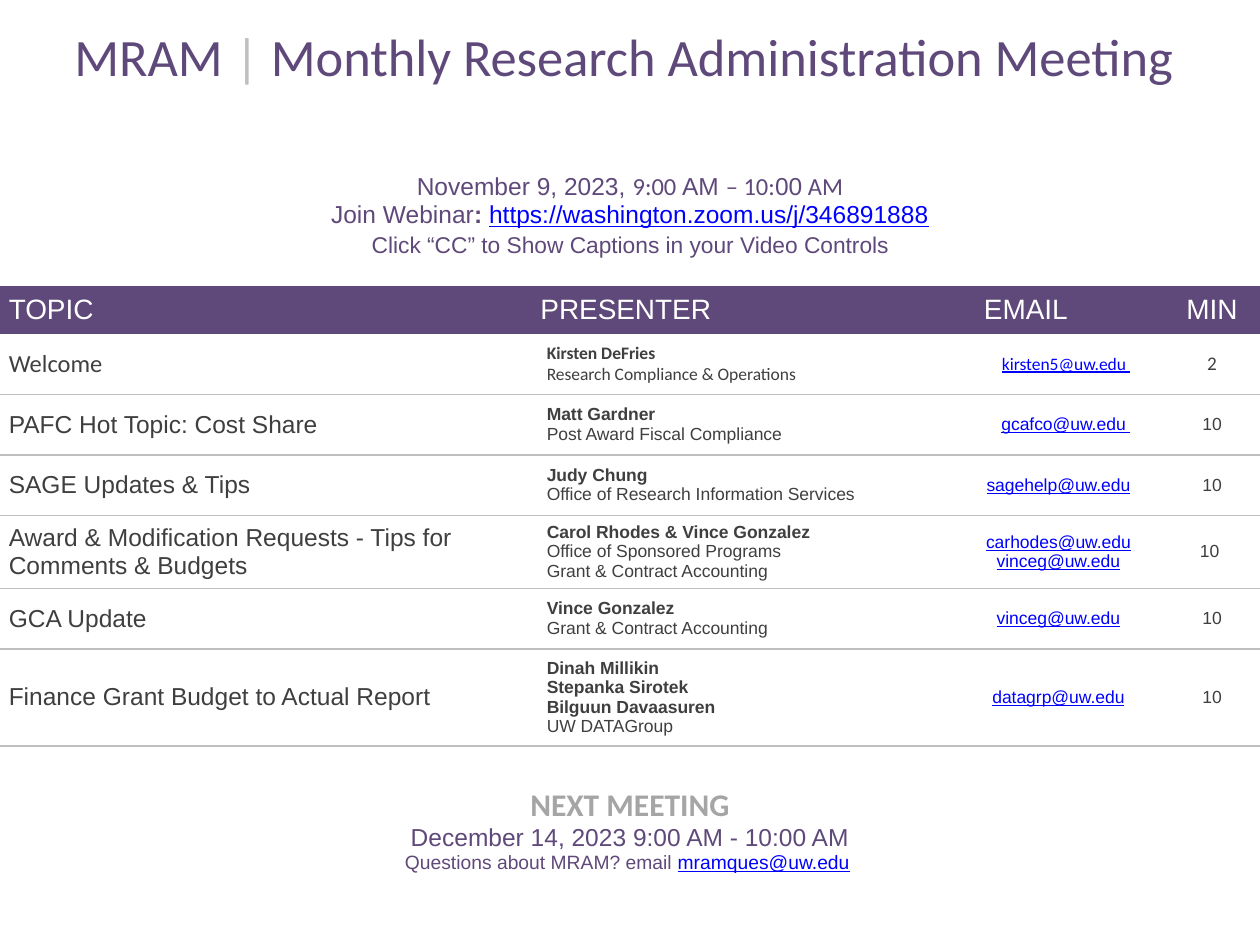
from dataclasses import dataclass

from lxml.etree import SubElement
from pptx import Presentation
from pptx.dml.color import RGBColor
from pptx.enum.text import MSO_ANCHOR, PP_ALIGN
from pptx.oxml.ns import qn
from pptx.util import Inches, Pt


@dataclass(frozen=True)
class Theme:
    purple: str = "5F497A"
    gray: str = "A5A5A5"
    rule: str = "BFBFBF"
    text: str = "3F3F3F"
    link: str = "0000FF"
    white: str = "FFFFFF"
    sans: str = "Arial"
    accent_font: str = "Calibri"
    title: int = 30
    subtitle: int = 18
    header: int = 16
    topic: int = 14
    caption: int = 13
    small: int = 11
    detail: int = 10


THEME = Theme()
COLUMN_WIDTHS = [4.22, 3.46, 1.56, 0.76]
ROW_HEIGHTS = [0.72, 1.55, 0.38, 0.48, 0.48, 0.48, 0.58, 0.48, 0.77, 1.58]
HEADER_ROW = 2
FIRST_TOPIC_ROW = 3
CENTER, LEFT = PP_ALIGN.CENTER, PP_ALIGN.LEFT

# Topic, presenters, offices, emails, minutes
AGENDA = [
    ("Welcome", ["Kirsten DeFries"], ["Research Compliance & Operations"],
     ["kirsten5@uw.edu "], "2"),
    ("PAFC Hot Topic: Cost Share", ["Matt Gardner"],
     ["Post Award Fiscal Compliance"], ["gcafco@uw.edu "], "10"),
    ("SAGE Updates & Tips", ["Judy Chung"],
     ["Office of Research Information Services"], ["sagehelp@uw.edu"], "10"),
    ("Award & Modification Requests - Tips for Comments & Budgets",
     ["Carol Rhodes & Vince Gonzalez"],
     ["Office of Sponsored Programs", "Grant & Contract Accounting"],
     ["carhodes@uw.edu", "vinceg@uw.edu"], "10 "),
    ("GCA Update", ["Vince Gonzalez"], ["Grant & Contract Accounting"],
     ["vinceg@uw.edu"], "10"),
    ("Finance Grant Budget to Actual Report",
     ["Dinah Millikin", "Stepanka Sirotek", "Bilguun Davaasuren"],
     ["UW DATAGroup"], ["datagrp@uw.edu"], "10"),
]


def run(text, size, color=THEME.purple, name=THEME.sans, bold=False,
        underline=False):
    """Describe one piece of text and its font."""
    return text, color, dict(size=Pt(size), name=name, bold=bold,
                             underline=underline)


def link(text, size, name=THEME.sans):
    return run(text, size, THEME.link, name, underline=True)


def fill_cell(cell, lines, align=LEFT, anchor=MSO_ANCHOR.MIDDLE,
              margins=(0.07, 0, 0.07, 0), fill=THEME.white):
    """Write lines (lists of runs) into a cell and colour it."""
    cell.fill.solid()
    cell.fill.fore_color.rgb = RGBColor.from_string(fill)
    cell.vertical_anchor = anchor
    for side, margin in zip(("left", "top", "right", "bottom"), margins):
        setattr(cell, f"margin_{side}", Inches(margin))
    frame = cell.text_frame
    for index, line in enumerate(lines):
        paragraph = frame.add_paragraph() if index else frame.paragraphs[0]
        paragraph.alignment = align
        for text, color, font_values in line:
            piece = paragraph.add_run()
            piece.text = text
            for attribute, value in font_values.items():
                setattr(piece.font, attribute, value)
            piece.font.color.rgb = RGBColor.from_string(color)


def set_borders(cell, ruled_sides):
    """Rule the named sides of a cell and clear the others."""
    properties = cell._tc.get_or_add_tcPr()
    for side in "LRTB":
        border = SubElement(properties, qn(f"a:ln{side}"), w=str(Pt(1)))
        if side in ruled_sides:
            solid = SubElement(border, qn("a:solidFill"))
            SubElement(solid, qn("a:srgbClr"), val=THEME.rule)
        else:
            SubElement(border, qn("a:noFill"))


def add_grid(slide, left, top, width, height):
    """Add the table with its columns, rows, rules and merged rows."""
    table = slide.shapes.add_table(len(ROW_HEIGHTS), len(COLUMN_WIDTHS),
                                   left, top, width, height).table
    table.first_row = table.horz_banding = False
    for column, column_width in zip(table.columns, COLUMN_WIDTHS):
        column.width = Inches(column_width)
    last = len(ROW_HEIGHTS) - 1
    for index, (row, row_height) in enumerate(zip(table.rows, ROW_HEIGHTS)):
        row.height = Inches(row_height)
        ruled = "T" if index > FIRST_TOPIC_ROW else ""
        ruled += "B" if FIRST_TOPIC_ROW <= index < last else ""
        for cell in row.cells:
            set_borders(cell, ruled)
    for index in (0, 1, last):
        table.cell(index, 0).merge(table.cell(index, len(COLUMN_WIDTHS) - 1))
    return table


def fill_heading(title_cell, details_cell):
    """Meeting name, date and webinar details."""
    calibri, size = THEME.accent_font, THEME.topic
    fill_cell(title_cell, [[
        run("MRAM ", THEME.title, name=calibri),
        run("|", THEME.title, THEME.rule, calibri),
        run(" Monthly Research Administration Meeting ", THEME.title,
            name=calibri)]], CENTER, MSO_ANCHOR.BOTTOM)
    fill_cell(details_cell, [
        [run("November 9, 2023, ", size), run("9:00 ", size, name=calibri),
         run("AM ", size), run("– 10:", size, name=calibri),
         run("00", size), run(" AM", size, name=calibri)],
        [run("Join Webinar", size), run(": ", size, bold=True),
         link("https://washington.zoom.us/j/346891888", size)],
        [run("Click “CC” to Show Captions in your Video Controls",
             THEME.caption)],
    ], CENTER, MSO_ANCHOR.BOTTOM, (0.07, 0, 0.07, 0.22))
    details_cell.text_frame.paragraphs[-1].line_spacing = 1.15


def fill_header(cells):
    """Column names on the purple band."""
    formats = [("TOPIC", LEFT, 0.07), ("PRESENTER", LEFT, 0.07),
               ("EMAIL", LEFT, 0.13), ("MIN", CENTER, 0.07)]
    for cell, (label, align, indent) in zip(cells, formats):
        fill_cell(cell, [[run(label, THEME.header, THEME.white)]], align,
                  margins=(indent, 0, 0.07, 0), fill=THEME.purple)


def fill_topic(cells, entry, opening):
    """One agenda row; the opening row has its own font."""
    topic, presenters, offices, emails, minutes = entry
    topic_cell, presenter_cell, email_cell, minutes_cell = cells
    name = THEME.accent_font if opening else THEME.sans
    detail = THEME.detail
    fill_cell(topic_cell, [[run(topic, THEME.topic, THEME.text, name)]])
    people = [[run(person, detail, THEME.text, name, True)]
              for person in presenters]
    people += [[run(office, detail, THEME.text, name)] for office in offices]
    fill_cell(presenter_cell, people, margins=(0.12, 0, 0.12, 0))
    indent = 0.12 if emails[0].endswith(" ") else 0
    fill_cell(email_cell, [[link(email, detail, name)] for email in emails],
              CENTER, margins=(indent, 0, 0.12, 0))
    minutes_size = THEME.small if opening else detail
    fill_cell(minutes_cell, [[run(minutes, minutes_size, THEME.text, name)]],
              CENTER)


def fill_footer(cell):
    """Next meeting and contact."""
    fill_cell(cell, [
        [run("NEXT MEETING", THEME.subtitle, THEME.gray, THEME.accent_font,
             True)],
        [run("December 14, 2023 9:00 AM - 10:00 AM", THEME.topic)],
        [run("Questions about MRAM? email ", THEME.small),
         link("mramques@uw.edu", THEME.small), run(" ", THEME.small)],
    ], CENTER, MSO_ANCHOR.TOP, (0.07, 0.32, 0.07, 0))


def main():
    presentation = Presentation()
    presentation.slide_width = Inches(10)
    presentation.slide_height = Inches(7.5)
    slide = presentation.slides.add_slide(presentation.slide_layouts[6])
    table = add_grid(slide, Inches(0), Inches(0), Inches(10), Inches(7.5))
    rows = [list(row.cells) for row in table.rows]
    fill_heading(rows[0][0], rows[1][0])
    fill_header(rows[HEADER_ROW])
    for index, entry in enumerate(AGENDA):
        fill_topic(rows[FIRST_TOPIC_ROW + index], entry, index == 0)
    fill_footer(rows[-1][0])
    presentation.save("out.pptx")


if __name__ == "__main__":
    main()
